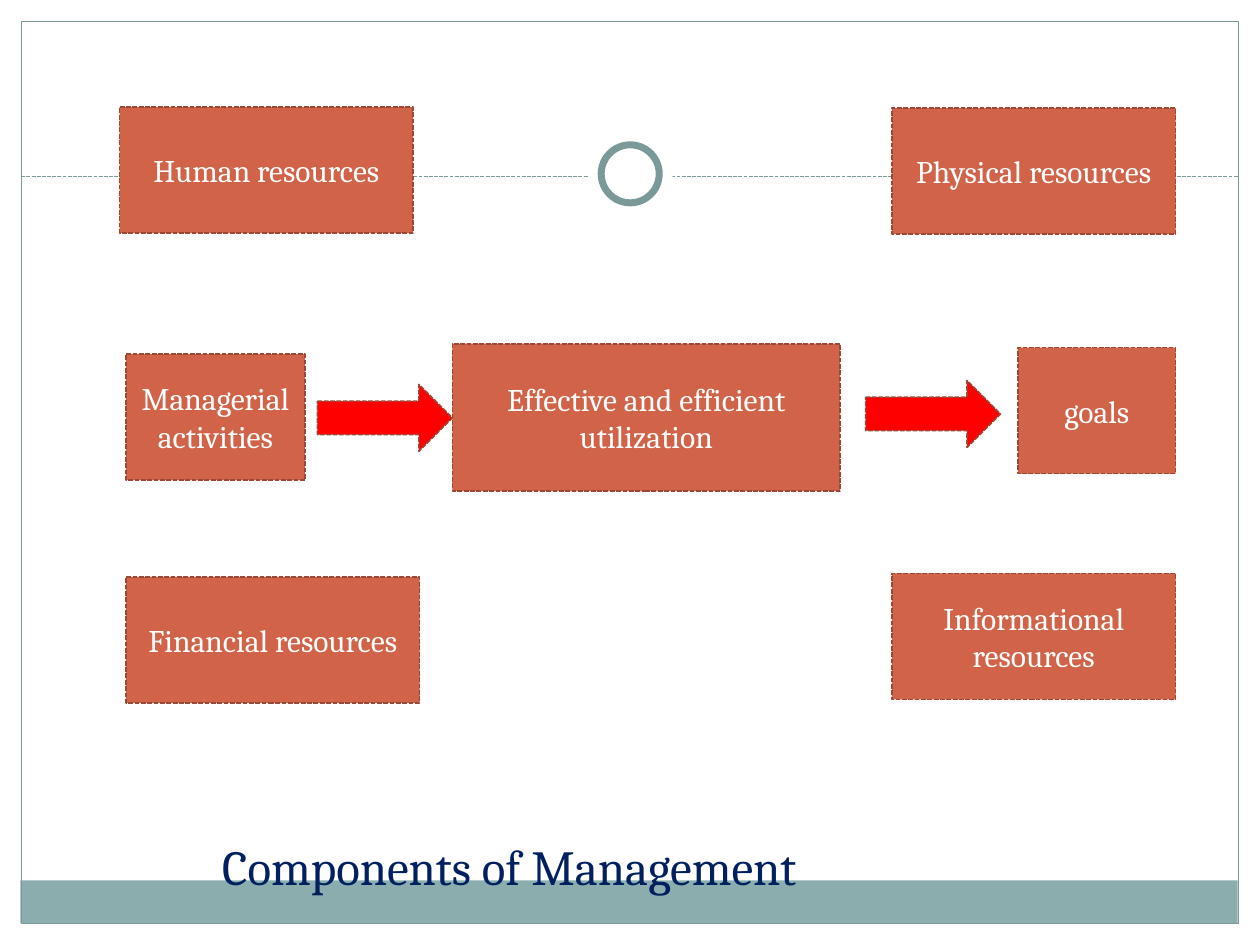
from lxml import etree
from pptx import Presentation
from pptx import util as u
from pptx.dml.color import RGBColor
from pptx.enum import dml, shapes, text
from pptx.oxml.ns import qn

FONT = "Cambria"
WHITE, TEAL, BAND = "FFFFFF", "7C999A", "8CADAE"
NAVY, RUST, BROWN, RED = "002060", "D16349", "9B4936", "FF0000"
SHAPE = shapes.MSO_SHAPE

BOX_HEIGHT = 2.54
BOXES = [  # label, left, top, width, height
    ("Effective and efficient utilization", 9.12, 6.93, 7.82, 2.97),
    ("Physical resources", 17.98, 2.18, 5.72, BOX_HEIGHT),
    ("Informational resources", 17.98, 11.56, 5.72, BOX_HEIGHT),
    ("Human resources", 2.41, 2.16, 5.92, BOX_HEIGHT),
    ("Financial resources", 2.54, 11.63, 5.92, BOX_HEIGHT),
    ("Managerial activities", 2.54, 7.14, 3.61, BOX_HEIGHT),
    ("goals", 20.52, 7.01, 3.18, BOX_HEIGHT),
]
ARROWS = [(6.4, 7.75), (17.45, 7.67)]


def rgb(value):
    return RGBColor.from_string(value)


def set_line(line, color, width, dashed=False):
    line.color.rgb = rgb(color)
    line.width = u.Pt(width)
    if dashed:
        line.dash_style = dml.MSO_LINE.SQUARE_DOT


def add_shape(s, kind, left, top, width, height, fill=None):
    """Add a preset shape without shadow or outline; no fill if none is given."""
    sp = s.shapes.add_shape(kind, u.Cm(left), u.Cm(top), u.Cm(width), u.Cm(height))
    sp.shadow.inherit = False
    sp.line.fill.background()
    if fill:
        sp.fill.solid()
        sp.fill.fore_color.rgb = rgb(fill)
    else:
        sp.fill.background()
    return sp


def write(tf, content, size, color, anchor):
    tf.word_wrap = True
    tf.auto_size = text.MSO_AUTO_SIZE.NONE
    tf.vertical_anchor = anchor
    p = tf.paragraphs[0]
    p.alignment = text.PP_ALIGN.CENTER
    r = p.add_run()
    r.text = content
    r.font.name = FONT
    r.font.size = u.Pt(size)
    r.font.color.rgb = rgb(color)


def add_divider(s, left, right, y):
    line = s.shapes.add_connector(shapes.MSO_CONNECTOR.STRAIGHT,
                                  u.Cm(left), u.Cm(y), u.Cm(right), u.Cm(y))
    set_line(line.line, TEAL, 0.75, dashed=True)
    etree.SubElement(line.element.spPr, qn("a:effectLst"))


def add_frame(s):
    add_shape(s, SHAPE.RECTANGLE, 0.41, 17.75, 24.54, 0.86, BAND)
    border = add_shape(s, SHAPE.RECTANGLE, 0.43, 0.43, 24.54, 18.19)
    set_line(border.line, TEAL, 0.75)
    add_divider(s, 0.43, 24.97, 3.56)
    add_shape(s, SHAPE.OVAL, 11.86, 2.67, 1.7, 1.7, WHITE)
    ring = add_shape(s, SHAPE.OVAL, 12.12, 2.92, 1.17, 1.17, WHITE)
    set_line(ring.line, TEAL, 4)


def place_title(s, content):
    """Format the title and bring it in front of the frame."""
    title = s.shapes.title
    title.left, title.top = u.Cm(0.84), u.Cm(16.71)
    title.width, title.height = u.Cm(18.85), u.Cm(1.47)
    write(title.text_frame, content, 28, NAVY, text.MSO_ANCHOR.BOTTOM)
    title.element.getparent().append(title.element)


def add_box(s, label, left, top, width, height):
    sp = add_shape(s, SHAPE.RECTANGLE, left, top, width, height, RUST)
    set_line(sp.line, BROWN, 0.9, dashed=True)
    write(sp.text_frame, label, 18, WHITE, text.MSO_ANCHOR.MIDDLE)


def add_arrow(s, left, top):
    sp = add_shape(s, SHAPE.RIGHT_ARROW, left, top, 2.72, 1.35, RED)
    set_line(sp.line, BROWN, 0.9, dashed=True)


def main():
    prs = Presentation()
    prs.slide_width, prs.slide_height = u.Cm(25.4), u.Cm(19.05)
    s = prs.slides.add_slide(prs.slide_layouts[5])
    add_frame(s)
    place_title(s, "Components of Management")
    for box in BOXES:
        add_box(s, *box)
    for arrow in ARROWS:
        add_arrow(s, *arrow)
    prs.save("out.pptx")


if __name__ == "__main__":
    main()
